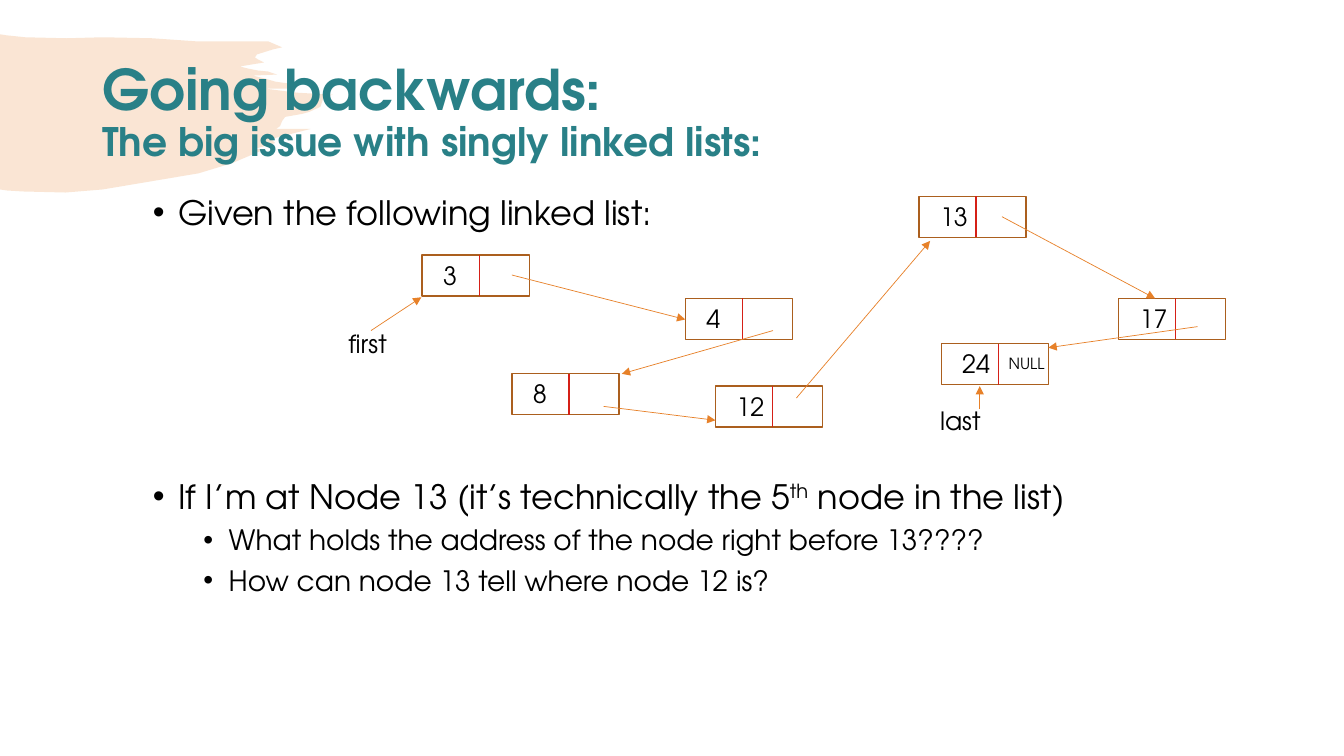
from lxml import etree
from pptx import Presentation
from pptx.dml.color import RGBColor
from pptx.enum.shapes import MSO_CONNECTOR, MSO_SHAPE
from pptx.enum.text import MSO_ANCHOR, MSO_AUTO_SIZE, PP_ALIGN
from pptx.oxml.ns import qn
from pptx.util import Cm, Pt

RECTANGLE = MSO_SHAPE.RECTANGLE
STRAIGHT = MSO_CONNECTOR.STRAIGHT
LEFT = PP_ALIGN.LEFT
TOP, MIDDLE = MSO_ANCHOR.TOP, MSO_ANCHOR.MIDDLE
NO_FIT, GROW = MSO_AUTO_SIZE.NONE, MSO_AUTO_SIZE.SHAPE_TO_FIT_TEXT

FONT = "TeX Gyre Adventor"
BLACK, WHITE, TEAL = "000000", "FFFFFF", "298087"
ORANGE, BROWN, RED = "E78129", "AB5F1E", "D52017"

NODE_WIDTH, NODE_HEIGHT, DIVIDER = 2.7, 1.03, 1.44
BRUSH_UNIT = 0.0254  # cm

# Each node: value, left, top
NODES = [
    ("3", 10.64, 6.43), ("8", 12.9, 9.42), ("12", 18.03, 9.73),
    ("4", 17.27, 7.52), ("24", 23.72, 8.66), ("13", 23.16, 4.95),
    ("17", 28.19, 7.52),
]
# Each arrow: start x, start y, end x, end y
ARROWS = [
    (12.9, 6.93, 17.27, 8.05),     # 3 to 4
    (19.48, 8.33, 15.67, 9.42),    # 4 to 8
    (15.21, 10.24, 18.03, 10.59),  # 8 to 12
    (20.07, 10.03, 23.44, 6.07),   # 12 to 13
    (25.25, 5.46, 29.11, 7.52),    # 13 to 17
    (30.18, 8.23, 26.42, 8.76),    # 17 to 24
    (9.35, 8.33, 10.62, 7.49),     # first
    (24.69, 10.31, 24.69, 9.73),   # last
]
# Each label: text, left, top, width, size
LABELS = [
    ("first", 8.53, 8.15, 1.5, 18),
    ("last", 23.44, 10.08, 1.55, 18),
    ("NULL", 25.17, 8.81, 1.42, 11),
]
# Each bullet: spans, level, size, space before
BULLETS = [
    (["Given the following linked list:"], 1, 24, 5),
    (["If I’m at Node 13 (it’s technically the 5", "th", " node in the list)"],
     1, 24, 174),
    (["What holds the address of the node right before 13????"], 2, 20, 5),
    (["How can node 13 tell where node 12 is?"], 2, 20, 5),
]
BRUSH = [
    (0, 34), (6, 35), (25, 37), (66, 38), (102, 37), (151, 38), (194, 41),
    (248, 41), (266, 41), (280, 47), (271, 49), (255, 54), (253, 57),
    (256, 59), (262, 62), (238, 66), (246, 68), (256, 70), (266, 71),
    (275, 74), (251, 75), (263, 78), (273, 81), (280, 82), (288, 83),
    (290, 85), (287, 88), (284, 88), (263, 88), (295, 92), (330, 94),
    (321, 97), (318, 106), (307, 111), (300, 113), (283, 116), (280, 120),
    (278, 125), (274, 128), (308, 128), (269, 138), (273, 142), (252, 148),
    (263, 148), (230, 162), (197, 172), (102, 188), (65, 191), (23, 190),
    (7, 189), (0, 188),
]


def color(value):
    return RGBColor.from_string(value)


class Slide:
    def __init__(self, page, font_name):
        self.page = page
        self.font_name = font_name

    def style(self, font, size, shade=BLACK, bold=False):
        font.name = self.font_name
        font.size = Pt(size)
        font.color.rgb = color(shade)
        font.bold = bold

    def place(self, box, left, top, width, height, anchor):
        box.left, box.top = Cm(left), Cm(top)
        box.width, box.height = Cm(width), Cm(height)
        frame = box.text_frame
        frame.auto_size = NO_FIT
        frame.word_wrap = True
        frame.vertical_anchor = anchor
        return frame

    def brush(self, points):
        builder = self.page.shapes.build_freeform(*points[0], scale=Cm(BRUSH_UNIT))
        builder.add_line_segments(points[1:], close=True)
        shape = builder.convert_to_shape()
        shape.shadow.inherit = False
        shape.fill.solid()
        shape.fill.fore_color.rgb = color(ORANGE)
        shape.line.fill.background()
        tint = next(shape.element.spPr.iter(qn("a:srgbClr")))
        etree.SubElement(tint, qn("a:alpha"), val="20000")
        # Send behind the placeholders
        shape.element.getparent().insert(2, shape.element)

    def title(self, heading, subheading):
        frame = self.place(self.page.shapes.title, 2.33, 1.02, 29.21, 3.68, MIDDLE)
        para = frame.paragraphs[0]
        para.alignment = LEFT
        para.line_spacing = 0.9
        span = para.add_run()
        span.text = heading
        self.style(span.font, 40, TEAL, True)
        para.add_line_break()
        span = para.add_run()
        span.text = subheading
        self.style(span.font, 28, TEAL, True)

    def bullets(self, items):
        box = self.page.placeholders[1]
        frame = self.place(box, 2.33, 4.7, 29.21, 13.08, TOP)
        for index, (spans, level, size, before) in enumerate(items):
            para = frame.add_paragraph() if index else frame.paragraphs[0]
            para.level = level
            para.alignment = LEFT
            para.space_before = Pt(before)
            self.style(para.font, size)
            for text in spans:
                span = para.add_run()
                span.text = text
                if text == "th":
                    span.font._element.set("baseline", "30000")
            props = para._p.get_or_add_pPr()
            props.set("marL", str(Cm(0.64 + 1.27 * level)))
            props.set("indent", str(-Cm(0.64)))
            bullet = etree.Element(qn("a:buChar"), char="•")
            props.find(qn("a:defRPr")).addprevious(bullet)

    def label(self, text, left, top, width, size):
        box = self.page.shapes.add_textbox(Cm(left), Cm(top), Cm(width), Cm(size * 0.057))
        frame = box.text_frame
        frame.word_wrap = False
        frame.auto_size = GROW
        para = frame.paragraphs[0]
        para.text = text
        self.style(para.font, size)

    def line(self, start_x, start_y, end_x, end_y, shade, weight, arrow=False):
        connector = self.page.shapes.add_connector(
            STRAIGHT, Cm(start_x), Cm(start_y), Cm(end_x), Cm(end_y))
        connector.line.color.rgb = color(shade)
        connector.line.width = Pt(weight)
        if arrow:
            outline = connector.line._get_or_add_ln()
            etree.SubElement(outline, qn("a:tailEnd"), type="triangle")
        etree.SubElement(connector._element.spPr, qn("a:effectLst"))

    def node(self, value, left, top):
        shape = self.page.shapes.add_shape(
            RECTANGLE, Cm(left), Cm(top), Cm(NODE_WIDTH), Cm(NODE_HEIGHT))
        shape.shadow.inherit = False
        shape.fill.solid()
        shape.fill.fore_color.rgb = color(WHITE)
        shape.line.color.rgb = color(BROWN)
        shape.line.width = Pt(1)
        middle = left + DIVIDER
        self.line(middle, top, middle, top + NODE_HEIGHT, RED, 1)
        self.label(value, left + 0.28, top, 0.5 + 0.36 * len(value), 18)


def main():
    deck = Presentation()
    deck.slide_width, deck.slide_height = Cm(33.87), Cm(19.05)
    slide = Slide(deck.slides.add_slide(deck.slide_layouts[1]), FONT)

    # Background and text
    slide.brush(BRUSH)
    slide.title("Going backwards:", "The big issue with singly linked lists:")
    slide.bullets(BULLETS)

    # Linked list
    for node in NODES:
        slide.node(*node)
    for arrow in ARROWS:
        slide.line(*arrow, ORANGE, 0.5, arrow=True)
    for label in LABELS:
        slide.label(*label)

    deck.save("out.pptx")


if __name__ == "__main__":
    main()
